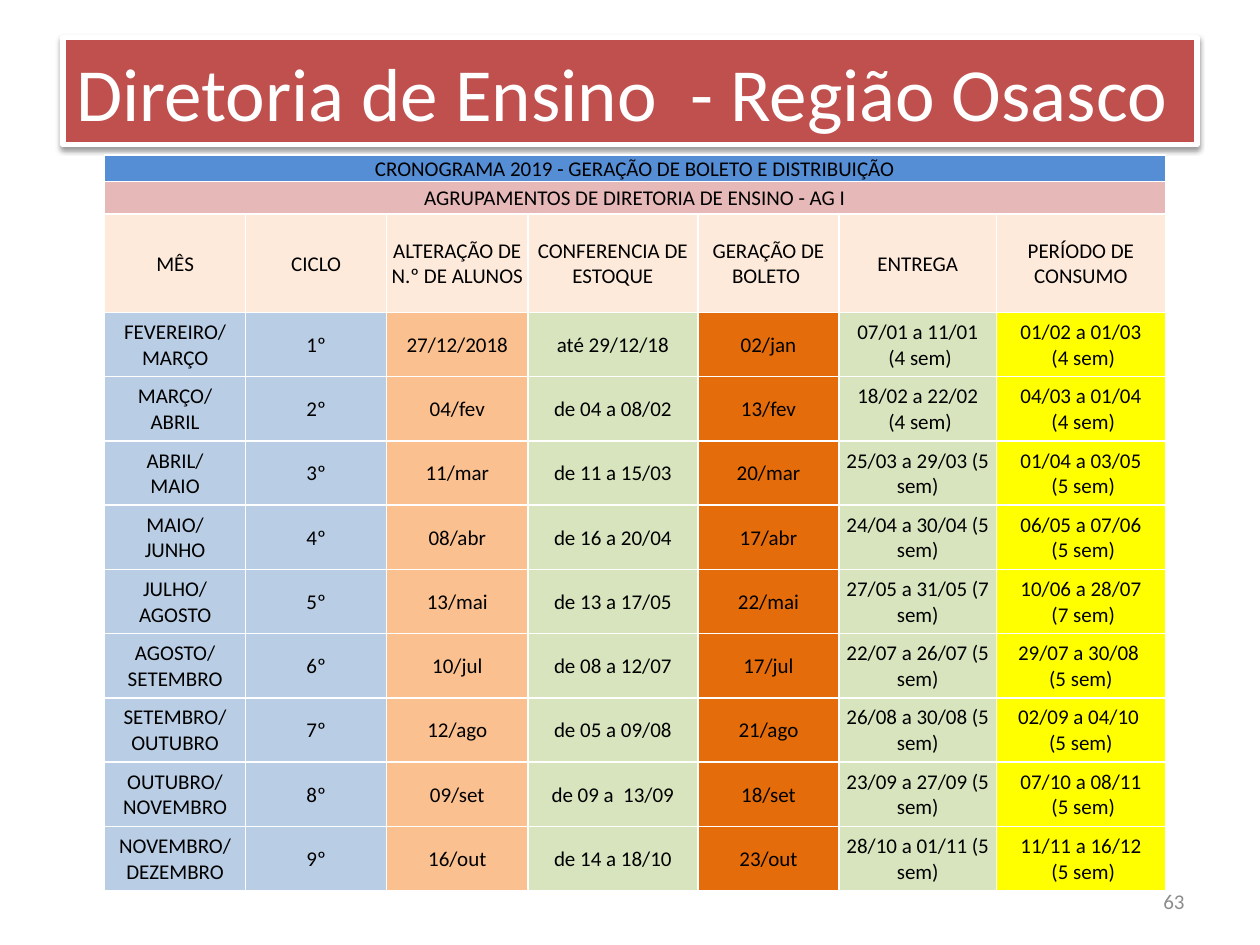
from lxml import etree
from pptx import Presentation
from pptx import util as u
from pptx.dml.color import RGBColor
from pptx.enum import text
from pptx.oxml import ns

HUES = {
    "white": "FFFFFF", "black": "000000", "gray": "8C8C8C", "red": "C0504D",
    "blue": "558ED5", "pink": "E6B9B8", "cream": "FDEADA", "sky": "B9CDE5",
    "peach": "FAC090", "green": "D7E4BD", "rust": "E46C0A", "yellow": "FFFF00",
}
BANDS = [
    ("CRONOGRAMA 2019 - GERAÇÃO DE BOLETO E DISTRIBUIÇÃO", "blue"),
    ("AGRUPAMENTOS DE DIRETORIA DE ENSINO - AG I", "pink"),
]
HEADS = ["MÊS", "CICLO", "ALTERAÇÃO DE N.º DE ALUNOS", "CONFERENCIA DE ESTOQUE",
         "GERAÇÃO DE BOLETO ", "ENTREGA", "PERÍODO DE CONSUMO"]
FILLS = ["sky", "sky", "peach", "green", "rust", "green", "yellow"]
WIDTHS = [1.12, 1.12, 1.12, 1.35, 1.12, 1.25, 1.34]
TOPS = [0.21, 0.26, 0.78]
STEP = 0.51
CYCLES = [
    ("FEVEREIRO/\vMARÇO", "27/12/2018", "até 29/12/18", "02/jan",
     "07/01 a 11/01\v (4 sem)", "01/02 a 01/03\v (4 sem)"),
    ("MARÇO/\vABRIL", "04/fev", "de 04 a 08/02", "13/fev",
     "18/02 a 22/02\v (4 sem)", "04/03 a 01/04\v (4 sem)"),
    ("ABRIL/\vMAIO", "11/mar", "de 11 a 15/03", "20/mar",
     "25/03 a 29/03 (5 sem)", "01/04 a 03/05\v (5 sem)"),
    ("MAIO/\vJUNHO", "08/abr", "de 16 a 20/04", "17/abr",
     "24/04 a 30/04 (5 sem)", "06/05 a 07/06\v (5 sem)"),
    ("JULHO/\vAGOSTO", "13/mai", "de 13 a 17/05", "22/mai",
     "27/05 a 31/05 (7 sem)", "10/06 a 28/07\v (7 sem)"),
    ("AGOSTO/\vSETEMBRO", "10/jul", "de 08 a 12/07", "17/jul",
     "22/07 a 26/07 (5 sem)", "29/07 a 30/08 \v(5 sem)"),
    ("SETEMBRO/\vOUTUBRO", "12/ago", "de 05 a 09/08", "21/ago",
     "26/08 a 30/08 (5 sem)", "02/09 a 04/10 \v(5 sem)"),
    ("OUTUBRO/\vNOVEMBRO", "09/set", "de 09 a  13/09", "18/set",
     "23/09 a 27/09 (5 sem)", "07/10 a 08/11\v (5 sem)"),
    ("NOVEMBRO/\vDEZEMBRO", "16/out", "de 14 a 18/10", "23/out",
     "28/10 a 01/11 (5 sem)", "11/11 a 16/12\v (5 sem)"),
]


def paint(fill, hue):
    """Give a fill one solid colour."""
    fill.solid()
    fill.fore_color.rgb = RGBColor.from_string(HUES[hue])


def write(frame, words, size, hue, align=text.PP_ALIGN.CENTER):
    """Write one formatted paragraph, centred vertically."""
    frame.text = words
    frame.vertical_anchor = text.MSO_ANCHOR.MIDDLE
    frame.word_wrap = True
    para = frame.paragraphs[0]
    para.alignment = align
    para.font.size = u.Pt(size)
    para.font.name = "Calibri"
    para.font.color.rgb = RGBColor.from_string(HUES[hue])


def shade(shape):
    """Add a soft black shadow below a shape."""
    props = shape._element.spPr
    list_ = etree.SubElement(props, ns.qn("a:effectLst"))
    drop = etree.SubElement(list_, ns.qn("a:outerShdw"), blurRad=str(u.Pt(3.1)),
                            dist=str(u.Pt(1.6)), dir="5400000", rotWithShape="0")
    tint = etree.SubElement(drop, ns.qn("a:srgbClr"), val=HUES["black"])
    etree.SubElement(tint, ns.qn("a:alpha"), val="38000")


def add_title(slide, wide, high):
    """Turn the title placeholder into the red banner."""
    title = slide.shapes.title
    title.left, title.top = int(wide * 0.05), int(high * 0.04)
    title.width, title.height = int(wide * 0.9), u.Inches(0.85)
    paint(title.fill, "red")
    paint(title.line.fill, "white")
    title.line.width = u.Pt(3)
    shade(title)
    write(title.text_frame, "Diretoria de Ensino  - Região Osasco  ", 42.9, "white")
    title.text_frame.auto_size = text.MSO_AUTO_SIZE.NONE


def set_cell(cell, words, hue):
    """Fill one table cell and write its words."""
    cell.margin_left = cell.margin_right = cell.margin_top = u.Inches(0.01)
    cell.margin_bottom = 0
    paint(cell.fill, hue)
    write(cell.text_frame, words, 12, "black")
    cell.vertical_anchor = text.MSO_ANCHOR.MIDDLE


def add_plan(slide):
    """Build the schedule table."""
    highs = TOPS + [STEP] * len(CYCLES)
    frame = slide.shapes.add_table(
        len(highs), len(WIDTHS), u.Inches(0.83), u.Inches(1.23),
        u.Inches(sum(WIDTHS)), u.Inches(sum(highs)))
    table = frame.table
    table.first_row = table.horz_banding = False
    for col, width in zip(table.columns, WIDTHS):
        col.width = u.Inches(width)
    for row, high in zip(table.rows, highs):
        row.height = u.Inches(high)
    for i, (words, hue) in enumerate(BANDS):
        table.cell(i, 0).merge(table.cell(i, len(WIDTHS) - 1))
        set_cell(table.cell(i, 0), words, hue)
    for j, words in enumerate(HEADS):
        set_cell(table.cell(len(BANDS), j), words, "cream")
    for i, (month, *dates) in enumerate(CYCLES):
        for j, words in enumerate([month, f"{i + 1}º", *dates]):
            set_cell(table.cell(len(TOPS) + i, j), words, FILLS[j])


def add_page(slide, wide, high):
    """Write the page number at the lower right."""
    box = slide.shapes.add_textbox(
        u.Inches(7.17), u.Inches(6.95), int(wide * 0.233), u.Inches(0.4))
    write(box.text_frame, "63", 12, "gray", text.PP_ALIGN.RIGHT)


def main():
    """Build and save the slide."""
    deck = Presentation()
    deck.slide_width, deck.slide_height = u.Inches(10), u.Inches(7.5)
    wide, high = deck.slide_width, deck.slide_height
    slide = deck.slides.add_slide(deck.slide_layouts[5])
    add_page(slide, wide, high)
    add_title(slide, wide, high)
    add_plan(slide)
    deck.save("out.pptx")


if __name__ == "__main__":
    main()
